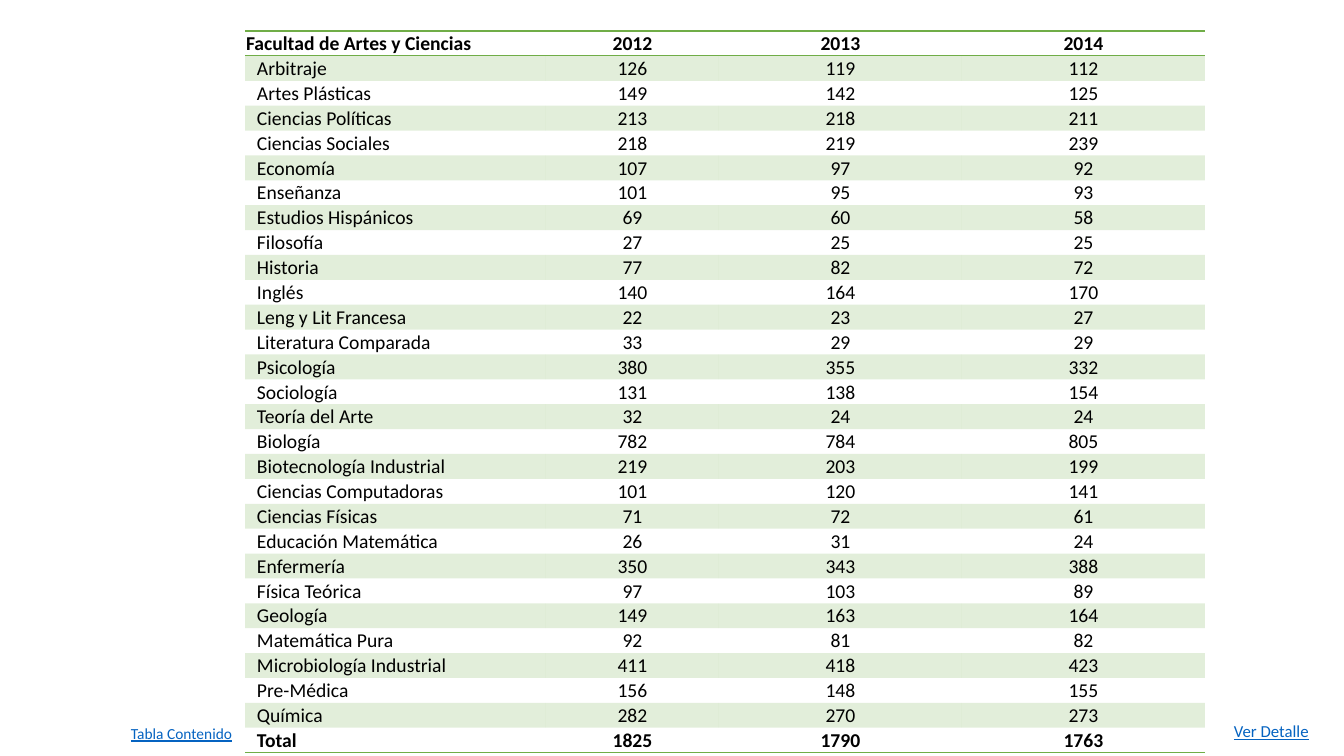
import pptx
import pptx.dml.color
import pptx.enum.text
import pptx.oxml
import pptx.oxml.ns
import pptx.util

PX = 914400 / 100.8
GREEN = pptx.dml.color.RGBColor(0x70, 0xAD, 0x47)
BLACK = pptx.dml.color.RGBColor(0x00, 0x00, 0x00)
LINK_BLUE = pptx.dml.color.RGBColor(0x05, 0x63, 0xC1)
FONT = "Calibri"
PLAIN_TABLE_STYLE = "{2D5ABB26-0587-4C30-8999-92F81FD0307C}"
COLUMN_WIDTHS = (301, 173, 243, 243)
ENROLLMENT = [
    ("Facultad de Artes y Ciencias", 2012, 2013, 2014),
    ("Arbitraje", 126, 119, 112),
    ("Artes Plásticas", 149, 142, 125),
    ("Ciencias Políticas", 213, 218, 211),
    ("Ciencias Sociales", 218, 219, 239),
    ("Economía", 107, 97, 92),
    ("Enseñanza", 101, 95, 93),
    ("Estudios Hispánicos", 69, 60, 58),
    ("Filosofía", 27, 25, 25),
    ("Historia", 77, 82, 72),
    ("Inglés", 140, 164, 170),
    ("Leng y Lit Francesa", 22, 23, 27),
    ("Literatura Comparada", 33, 29, 29),
    ("Psicología", 380, 355, 332),
    ("Sociología", 131, 138, 154),
    ("Teoría del Arte", 32, 24, 24),
    ("Biología", 782, 784, 805),
    ("Biotecnología Industrial", 219, 203, 199),
    ("Ciencias Computadoras", 101, 120, 141),
    ("Ciencias Físicas", 71, 72, 61),
    ("Educación Matemática", 26, 31, 24),
    ("Enfermería", 350, 343, 388),
    ("Física Teórica", 97, 103, 89),
    ("Geología", 149, 163, 164),
    ("Matemática Pura", 92, 81, 82),
    ("Microbiología Industrial", 411, 418, 423),
    ("Pre-Médica", 156, 148, 155),
    ("Química", 282, 270, 273),
    ("Total", 1825, 1790, 1763),
]


def px(length):
    """Turn a length in px into EMU."""
    return pptx.util.Emu(round(length * PX))


def style_font(font, size, color):
    """Set typeface, size in points and colour."""
    font.name = FONT
    font.size = pptx.util.Pt(size)
    font.color.rgb = color


def add_border(cell, side):
    """Draw a thin green line on one side of a cell."""
    properties = cell._tc.get_or_add_tcPr()
    properties.append(pptx.oxml.parse_xml(
        f'<a:{side} {pptx.oxml.ns.nsdecls("a")} w="12700"><a:solidFill>'
        f'<a:srgbClr val="{GREEN}"/></a:solidFill></a:{side}>'))


def fill_band(cell, shaded):
    """Give a cell the pale green band or leave it clear."""
    if not shaded:
        cell.fill.background()
        return
    cell.fill.solid()
    cell.fill.fore_color.rgb = GREEN
    color = cell._tc.tcPr.find(".//" + pptx.oxml.ns.qn("a:srgbClr"))
    color.append(pptx.oxml.parse_xml(
        f'<a:alpha {pptx.oxml.ns.nsdecls("a")} val="20000"/>'))


def format_cell(cell, value, row, column):
    """Write one value and format it by its place in the table."""
    last = len(ENROLLMENT) - 1
    cell.margin_left = px(12 if column == 0 and row > 0 else 1)
    cell.margin_right = cell.margin_top = px(1)
    cell.margin_bottom = 0
    cell.vertical_anchor = pptx.enum.text.MSO_ANCHOR.BOTTOM
    paragraph = cell.text_frame.paragraphs[0]
    paragraph.text = str(value)
    if column > 0:
        paragraph.alignment = pptx.enum.text.PP_ALIGN.CENTER
    font = paragraph.runs[0].font
    style_font(font, 14, BLACK)
    font.bold = row in (0, last)
    if row == 0:
        add_border(cell, "lnT")
    if row in (0, last):
        add_border(cell, "lnB")
    fill_band(cell, row % 2 == 1)


def add_enrollment_table(slide, left, top, height):
    """Place the enrollment table with equal rows in its box."""
    rows = len(ENROLLMENT)
    frame = slide.shapes.add_table(
        rows, len(COLUMN_WIDTHS), px(left), px(top),
        px(sum(COLUMN_WIDTHS)), px(height))
    table = frame.table
    table.first_row = table.horz_banding = False
    style = table._tbl.tblPr.find(pptx.oxml.ns.qn("a:tableStyleId"))
    style.text = PLAIN_TABLE_STYLE
    for column, width in zip(table.columns, COLUMN_WIDTHS):
        column.width = px(width)
    for row, values in enumerate(ENROLLMENT):
        table.rows[row].height = px(height / rows)
        for column, value in enumerate(values):
            format_cell(table.cell(row, column), value, row, column)


def add_link_label(slide, label, size, left, top, width, height):
    """Place an underlined blue label in its box."""
    box = slide.shapes.add_textbox(px(left), px(top), px(width), px(height))
    frame = box.text_frame
    frame.text = label
    frame.word_wrap = False
    frame.auto_size = pptx.enum.text.MSO_AUTO_SIZE.SHAPE_TO_FIT_TEXT
    font = frame.paragraphs[0].runs[0].font
    style_font(font, size, LINK_BLUE)
    font.underline = True


def main():
    """Build the slide and save it."""
    deck = pptx.Presentation()
    deck.slide_width, deck.slide_height = px(1344), px(756)
    slide = deck.slides.add_slide(deck.slide_layouts[6])
    add_enrollment_table(slide, 245, 31, 713)
    add_link_label(slide, "Tabla Contenido", 11, 121, 719, 123, 29)
    add_link_label(slide, "Ver Detalle", 12, 1224, 716, 96, 30)
    deck.save("out.pptx")


if __name__ == "__main__":
    main()
